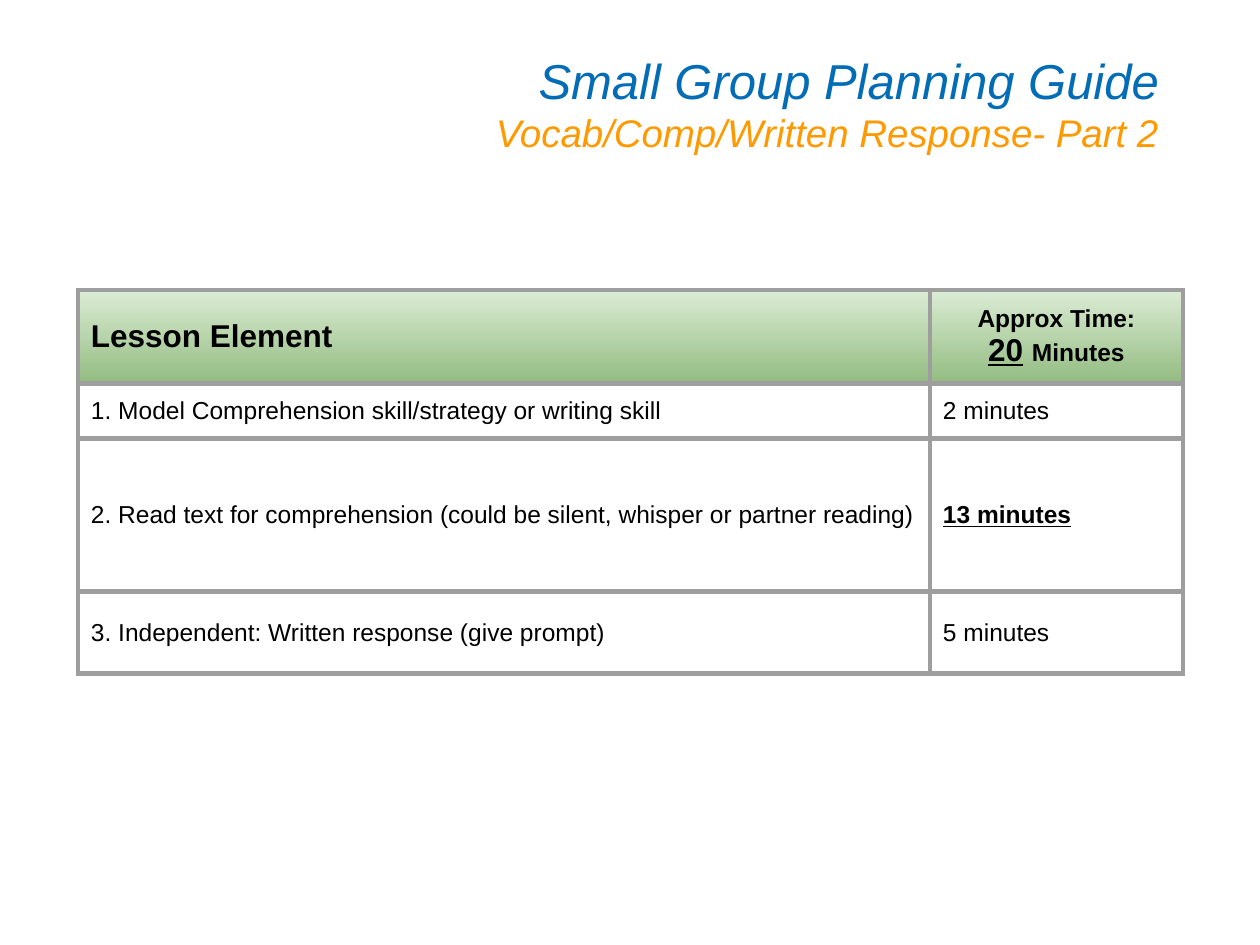
from lxml import etree
from pptx import Presentation
from pptx.dml.color import RGBColor
from pptx.enum.text import MSO_ANCHOR as Anchor, PP_ALIGN as Align
from pptx.oxml.ns import qn
from pptx.util import Emu, Pt

PX = 914400 / 126
BLUE, ORANGE, BLACK, GREY = "026CB6", "FF9900", "000000", "9E9E9E"
HEADER_GRADIENT = ("DCECD5", "93BC81")


def px(n):
    return Emu(round(n * PX))


def color(hex_string):
    return RGBColor.from_string(hex_string)


class Deck:
    font = "Arial"
    border = 3

    def __init__(self, width, height):
        self.prs = Presentation()
        self.prs.slide_width, self.prs.slide_height = px(width), px(height)
        self.s = self.prs.slides.add_slide(self.prs.slide_layouts[6])

    def style(self, font, size, hex_string, bold=False, italic=False, underline=False):
        font.name, font.size = self.font, Pt(size)
        font.color.rgb = color(hex_string)
        font.bold, font.italic, font.underline = bold, italic, underline

    def title(self, x, y, w, h, lines):
        tf = self.s.shapes.add_textbox(px(x), px(y), px(w), px(h)).text_frame
        tf.word_wrap = True
        tf.vertical_anchor = Anchor.MIDDLE
        p = tf.paragraphs[0]
        p.alignment = Align.RIGHT
        for i, (text, size, hex_string) in enumerate(lines):
            if i:
                p.add_line_break()
            r = p.add_run()
            r.text = text
            self.style(r.font, size, hex_string, italic=True)

    def table(self, x, y, widths, heights):
        table = self.s.shapes.add_table(
            len(heights), len(widths), px(x), px(y), px(sum(widths)), px(sum(heights))
        ).table
        table.first_row = table.horz_banding = False
        for column, w in zip(table.columns, widths):
            column.width = px(w)
        for row, h in zip(table.rows, heights):
            row.height = px(h)
        for cell in table.iter_cells():
            self.prepare(cell)
        return table

    def prepare(self, cell):
        cell.vertical_anchor = Anchor.MIDDLE
        cell.margin_left = cell.margin_right = px(13)
        cell.margin_top = cell.margin_bottom = px(13)
        cell.fill.background()
        tc_pr = cell._tc.get_or_add_tcPr()
        for i, side in enumerate(("lnL", "lnR", "lnT", "lnB")):
            ln = etree.Element(qn("a:" + side), w=str(Pt(self.border)))
            fill = etree.SubElement(ln, qn("a:solidFill"))
            etree.SubElement(fill, qn("a:srgbClr"), val=GREY)
            tc_pr.insert(i, ln)

    def gradient(self, cell, colors):
        cell.fill.gradient()
        cell.fill.gradient_angle = 270
        for stop, position, hex_string in zip(cell.fill.gradient_stops, (0, 1), colors):
            stop.position = position
            stop.color.rgb = color(hex_string)

    def text(self, p, text, size=14, **look):
        p.text = text
        self.style(p.font, size, BLACK, **look)


def main():
    deck = Deck(1260, 945)

    # Title
    deck.title(310, 35, 861, 136, [
        ("Small Group Planning Guide", 28, BLUE),
        ("Vocab/Comp/Written Response- Part 2", 22, ORANGE),
    ])

    # Lesson table
    table = deck.table(78, 290, (852, 253), (87, 54, 153, 82))

    # Header row
    lesson, time = table.cell(0, 0), table.cell(0, 1)
    for cell in (lesson, time):
        deck.gradient(cell, HEADER_GRADIENT)
    deck.text(lesson.text_frame.paragraphs[0], "Lesson Element", 18, bold=True)
    tf = time.text_frame
    deck.text(tf.paragraphs[0], "Approx Time:", bold=True)
    p = tf.add_paragraph()
    for text, size, underline in (("20", 18, True), (" ", 18, False), ("Minutes", 14, False)):
        r = p.add_run()
        r.text = text
        deck.style(r.font, size, BLACK, bold=True, underline=underline)
    for p in tf.paragraphs:
        p.alignment = Align.CENTER

    # Lesson steps
    steps = [
        ("1. Model Comprehension skill/strategy or writing skill", "2 minutes", False),
        ("2. Read text for comprehension (could be silent, whisper or partner reading)",
         "13 minutes", True),
        ("3. Independent: Written response (give prompt)", "5 minutes", False),
    ]
    for row, (step, minutes, strong) in enumerate(steps, 1):
        deck.text(table.cell(row, 0).text_frame.paragraphs[0], step)
        deck.text(table.cell(row, 1).text_frame.paragraphs[0], minutes,
                  bold=strong, underline=strong)

    deck.prs.save("out.pptx")


if __name__ == "__main__":
    main()
